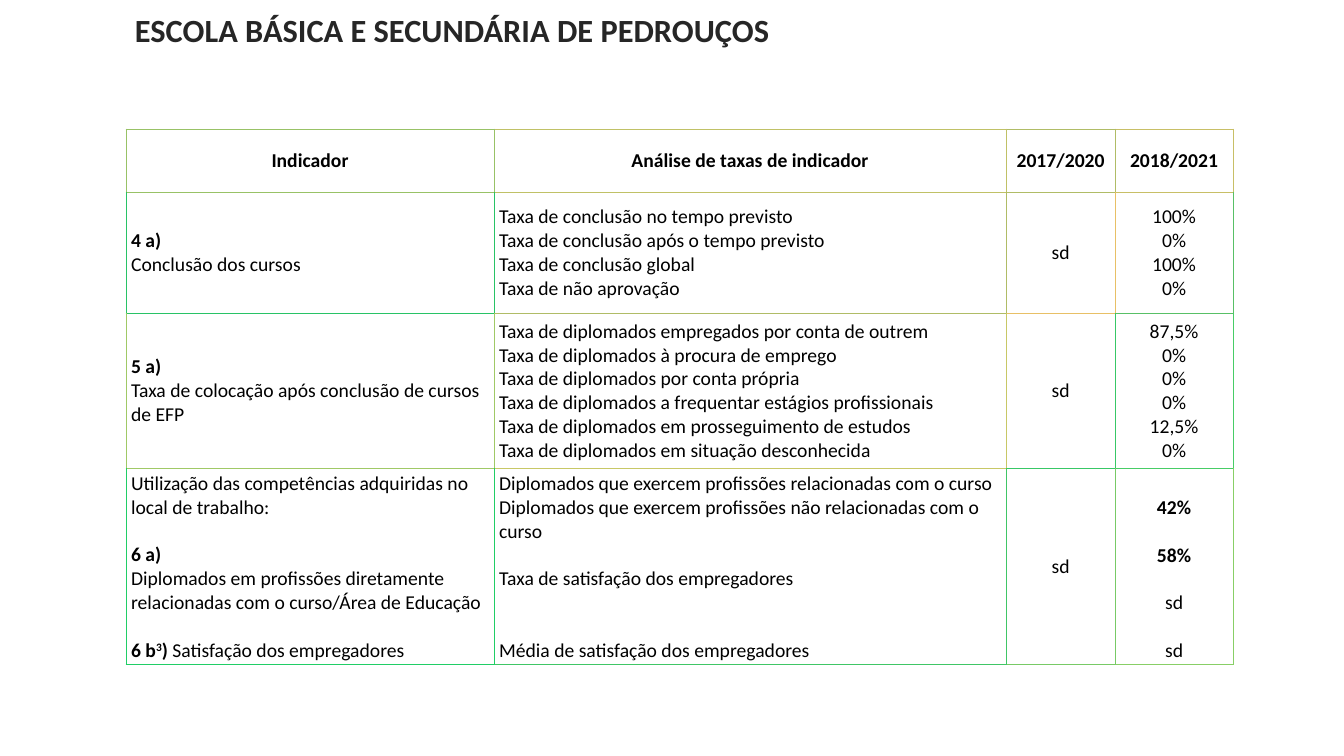
from pptx import Presentation
from pptx.dml.color import RGBColor as Rgb
from pptx.enum.text import MSO_ANCHOR as Anchor, PP_ALIGN as Align
from pptx.oxml import parse_xml
from pptx.oxml.ns import nsdecls
from pptx.util import Inches, Pt

TITLE = "ESCOLA BÁSICA E SECUNDÁRIA DE PEDROUÇOS"
FONT = "Calibri"
SIZE = 14
LINE = 17.1
INK = {"title": "262626", "body": "000000"}
COLS = [3.65, 5.08, 1.08, 1.17]
ROWS = [0.63, 1.2, 1.54, 1.94]
EDGES = [
    ["98C266", "C0C166", "B0BC66", "C8BF66"],
    ["28C366", "B0BC66", "E8C066", "58C066"],
    ["A0C966", "C8C866", "38C866", "48CD66"],
    ["20CE66", "40C666", "78CA66", "88CF66"],
]

# Each paragraph: lines of space before it, then its (text, bold, raise) runs.


def plain(text, gap=0):
    return gap, [(text, False, 0)]


def strong(text, gap=0):
    return gap, [(text, True, 0)]


CELLS = [
    [
        [strong("Indicador")],
        [strong("Análise de taxas de indicador")],
        [strong("2017/2020")],
        [strong("2018/2021")],
    ],
    [
        [strong("4 a)"), plain("Conclusão dos cursos")],
        [
            plain("Taxa de conclusão no tempo previsto"),
            plain("Taxa de conclusão após o tempo previsto"),
            plain("Taxa de conclusão global"),
            plain("Taxa de não aprovação"),
        ],
        [plain("sd")],
        [plain(rate) for rate in ("100%", "0%", "100%", "0%")],
    ],
    [
        [strong("5 a)"), plain("Taxa de colocação após conclusão de cursos de EFP")],
        [
            plain("Taxa de diplomados empregados por conta de outrem"),
            plain("Taxa de diplomados à procura de emprego"),
            plain("Taxa de diplomados por conta própria"),
            plain("Taxa de diplomados a frequentar estágios profissionais"),
            plain("Taxa de diplomados em prosseguimento de estudos"),
            plain("Taxa de diplomados em situação desconhecida"),
        ],
        [plain("sd")],
        [plain(rate) for rate in ("87,5%", "0%", "0%", "0%", "12,5%", "0%")],
    ],
    [
        [
            plain("Utilização das competências adquiridas no local de trabalho:"),
            strong("6 a)", 1),
            plain("Diplomados em profissões diretamente relacionadas com o curso/Área de Educação"),
            (1, [
                ("6 b", True, 0),
                ("3", True, 30),
                (") ", True, 0),
                ("Satisfação dos empregadores", False, 0),
            ]),
        ],
        [
            plain("Diplomados que exercem profissões relacionadas com o curso"),
            plain("Diplomados que exercem profissões não relacionadas com o curso"),
            plain("Taxa de satisfação dos empregadores", 1),
            plain("Média de satisfação dos empregadores", 2),
        ],
        [plain("sd")],
        [strong("42%"), strong("58%", 1), plain("sd", 1), plain("sd", 1)],
    ],
]


def style(font, size, ink, bold):
    font.name = FONT
    font.size = Pt(size)
    font.bold = bold
    font.color.rgb = Rgb.from_string(INK[ink])


def write(para, gap, runs):
    if gap:
        para.space_before = Pt(gap * LINE)
    for text, bold, base in runs:
        run = para.add_run()
        run.text = text
        if len(runs) > 1:
            run.font.bold = bold
        if base:
            run.font._element.set("baseline", str(base * 1000))
    style(para.font, SIZE, "body", runs[0][1] if len(runs) == 1 else None)


def border(cell, row, col):
    own = EDGES[row][col]
    left = EDGES[row][max(col - 1, 0)]
    top = EDGES[max(row - 1, 0)][col]
    props = cell._tc.get_or_add_tcPr()
    for spot, (side, ink) in enumerate(zip("LRTB", (left, own, top, own))):
        props.insert(spot, parse_xml(
            f'<a:ln{side} {nsdecls("a")} w="{Pt(0.6)}"><a:solidFill>'
            f'<a:srgbClr val="{ink}"/></a:solidFill></a:ln{side}>'))


def main():
    deck = Presentation()
    deck.slide_width, deck.slide_height = Inches(13.33), Inches(7.5)
    slide = deck.slides.add_slide(deck.slide_layouts[6])

    title = slide.shapes.add_textbox(
        Inches(1.24), Inches(0.05), Inches(8.33), Inches(0.48)).text_frame
    title.word_wrap = True
    title.vertical_anchor = Anchor.MIDDLE
    title.text = TITLE
    style(title.paragraphs[0].font, 23.1, "title", True)

    table = slide.shapes.add_table(
        len(ROWS), len(COLS), Inches(1.25), Inches(1.28),
        Inches(sum(COLS)), Inches(sum(ROWS))).table
    table.first_row = table.horz_banding = False
    for col, width in enumerate(COLS):
        table.columns[col].width = Inches(width)
    for row, height in enumerate(ROWS):
        table.rows[row].height = Inches(height)
        for col, paras in enumerate(CELLS[row]):
            cell = table.cell(row, col)
            cell.margin_left = cell.margin_right = Inches(0.05)
            cell.margin_top = cell.margin_bottom = Inches(0.03)
            cell.vertical_anchor = Anchor.MIDDLE
            cell.fill.background()
            border(cell, row, col)
            frame = cell.text_frame
            for spot, (gap, runs) in enumerate(paras):
                para = frame.add_paragraph() if spot else frame.paragraphs[0]
                if row == 0 or col > 1:
                    para.alignment = Align.CENTER
                write(para, gap, runs)
    table.cell(3, 0).vertical_anchor = Anchor.TOP
    table.cell(3, 3).margin_top = Inches(0.03) + Pt(LINE)

    deck.save("out.pptx")


if __name__ == "__main__":
    main()
